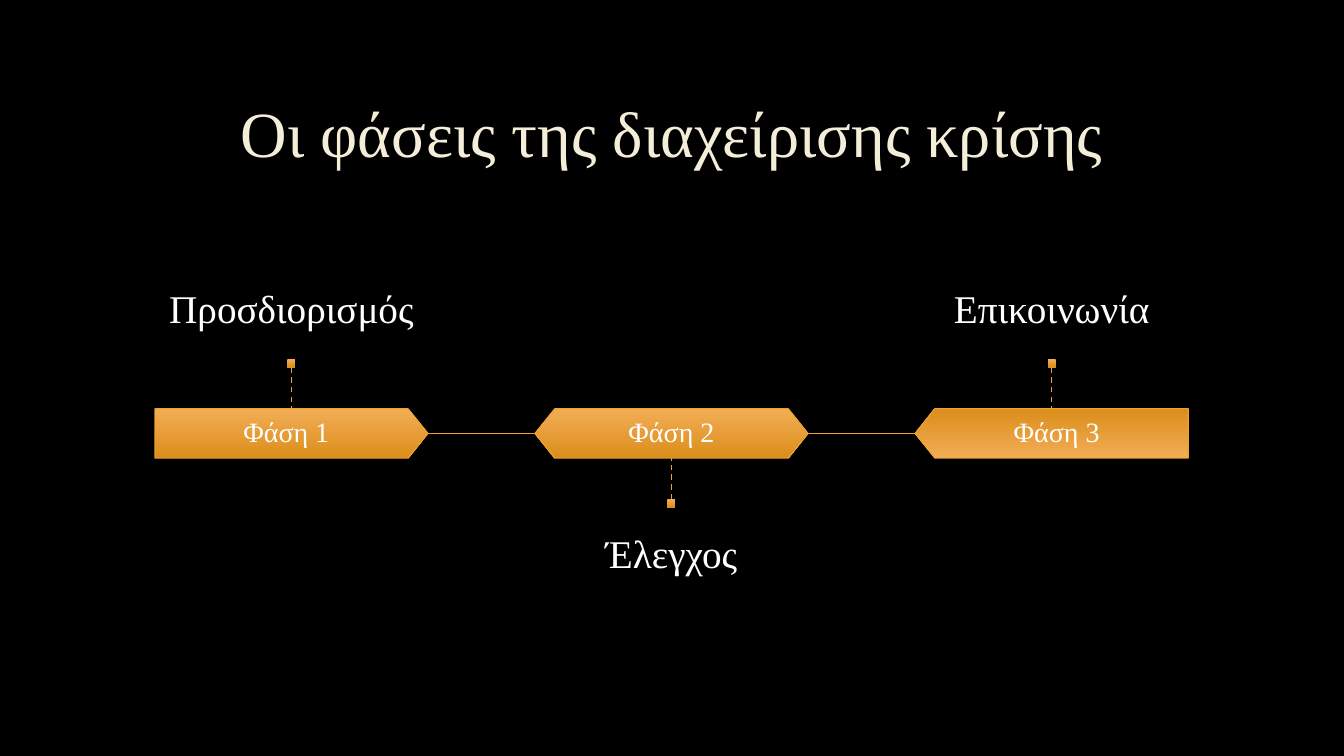
import pptx
import pptx.util
import pptx.dml.color
import pptx.enum.dml
import pptx.enum.shapes
import pptx.enum.text
import pptx.oxml.ns
import lxml.etree

Inches, Pt = pptx.util.Inches, pptx.util.Pt
RGBColor = pptx.dml.color.RGBColor
SHAPE = pptx.enum.shapes.MSO_SHAPE
ANCHOR = pptx.enum.text.MSO_ANCHOR
DASH = pptx.enum.dml.MSO_LINE.DASH

# Content: phase, caption, shape, rotation, caption above, label shift
TITLE = "Οι φάσεις της διαχείρισης κρίσης"
PHASES = [
    ("Φάση 1", "Προσδιορισμός", SHAPE.PENTAGON, 0, True, -0.05),
    ("Φάση 2", "Έλεγχος", SHAPE.HEXAGON, 0, False, 0),
    ("Φάση 3", "Επικοινωνία", SHAPE.PENTAGON, 180, True, 0.05),
]

# Style
FONT = "Times New Roman"
BLACK = RGBColor(0x00, 0x00, 0x00)
WHITE = RGBColor(0xFF, 0xFF, 0xFF)
CREAM = RGBColor(0xF4, 0xED, 0xD8)
ORANGE = RGBColor(0xF0, 0xA2, 0x2E)
ORANGE_TOP = RGBColor(0xF2, 0xAD, 0x56)
ORANGE_BOTTOM = RGBColor(0xDB, 0x8E, 0x1B)

# Timeline grid, in inches
WIDTH, HEIGHT = 13.33, 7.5
PITCH = 3.77
FIRST_CENTER = 2.89
AXIS = 4.3
BAR_W, BAR_H = 2.71, 0.49
LABEL_W = 2.62
STEM = 0.41
MARKER = 0.08
CAPTION_H = 1.3


def write(tf, text, size, color, anchor, inset=None):
    tf.word_wrap = True
    tf.auto_size = pptx.enum.text.MSO_AUTO_SIZE.NONE
    tf.vertical_anchor = anchor
    if inset:
        tf.margin_left = tf.margin_right = Inches(inset[0])
        tf.margin_top = tf.margin_bottom = Inches(inset[1])
    p = tf.paragraphs[0]
    p.alignment = pptx.enum.text.PP_ALIGN.CENTER
    p.line_spacing = 0.9
    r = p.add_run()
    r.text = text
    r.font.name = FONT
    r.font.size = Pt(size)
    r.font.color.rgb = color


def add_text(s, center, top, width, height, *style):
    box = s.shapes.add_textbox(Inches(center - width / 2), Inches(top),
                               Inches(width), Inches(height))
    write(box.text_frame, *style)


def add_block(s, kind, center, middle, width, height):
    sp = s.shapes.add_shape(kind, Inches(center - width / 2),
                            Inches(middle - height / 2),
                            Inches(width), Inches(height))
    sp.shadow.inherit = False
    sp.fill.gradient()
    sp.fill.gradient_angle = 270
    for stop, color in zip(sp.fill.gradient_stops, (ORANGE_TOP, ORANGE_BOTTOM)):
        stop.color.rgb = color
    sp.line.fill.background()
    return sp


def add_line(s, x1, y1, x2, y2, weight):
    line = s.shapes.add_connector(pptx.enum.shapes.MSO_CONNECTOR.STRAIGHT,
                                  Inches(x1), Inches(y1), Inches(x2), Inches(y2))
    line.line.color.rgb = ORANGE
    line.line.width = Pt(weight)
    lxml.etree.SubElement(line._element.spPr, pptx.oxml.ns.qn("a:effectLst"))
    return line


def add_phase(s, center, phase, caption, kind, rotation, above, shift):
    # Bar and its label
    bar = add_block(s, kind, center, AXIS, BAR_W, BAR_H)
    bar.adjustments[0] = 0.4
    bar.rotation = rotation
    bar.line.color.rgb = ORANGE
    bar.line.width = Pt(0.75)
    add_text(s, center + shift, AXIS - BAR_H / 2, LABEL_W, BAR_H,
             phase, 20, WHITE, ANCHOR.MIDDLE, (0.17, 0.17))

    # Marker and dashed stem
    side = -1 if above else 1
    edge = AXIS + side * BAR_H / 2
    marker_y = edge + side * (STEM + MARKER / 2)
    marker = add_block(s, SHAPE.RECTANGLE, center, marker_y, MARKER, MARKER)
    stem = add_line(s, center, edge + side * STEM, center, edge, 1)
    stem.begin_connect(marker, 2 if above else 0)
    stem.line.dash_style = DASH

    # Caption
    add_text(s, center, marker_y - CAPTION_H - 0.04 if above else marker_y + 0.04,
             PITCH, CAPTION_H, caption, 28, WHITE,
             ANCHOR.BOTTOM if above else ANCHOR.TOP, (0, 0.27))


def main():
    prs = pptx.Presentation()
    prs.slide_width, prs.slide_height = Inches(WIDTH), Inches(HEIGHT)
    s = prs.slides.add_slide(prs.slide_layouts[5])
    s.background.fill.solid()
    s.background.fill.fore_color.rgb = BLACK

    # Title
    title = s.shapes.title
    title.left, title.top = Inches(1), Inches(0.67)
    title.width, title.height = Inches(11.32), Inches(1.38)
    write(title.text_frame, TITLE, 46, CREAM, ANCHOR.MIDDLE)

    # Phases, with a line across each gap
    for i, phase in enumerate(PHASES):
        center = FIRST_CENTER + i * PITCH
        add_phase(s, center, *phase)
        if i:
            add_line(s, center - PITCH + BAR_W / 2, AXIS,
                     center - BAR_W / 2, AXIS, 0.75)

    prs.save("out.pptx")


if __name__ == "__main__":
    main()
